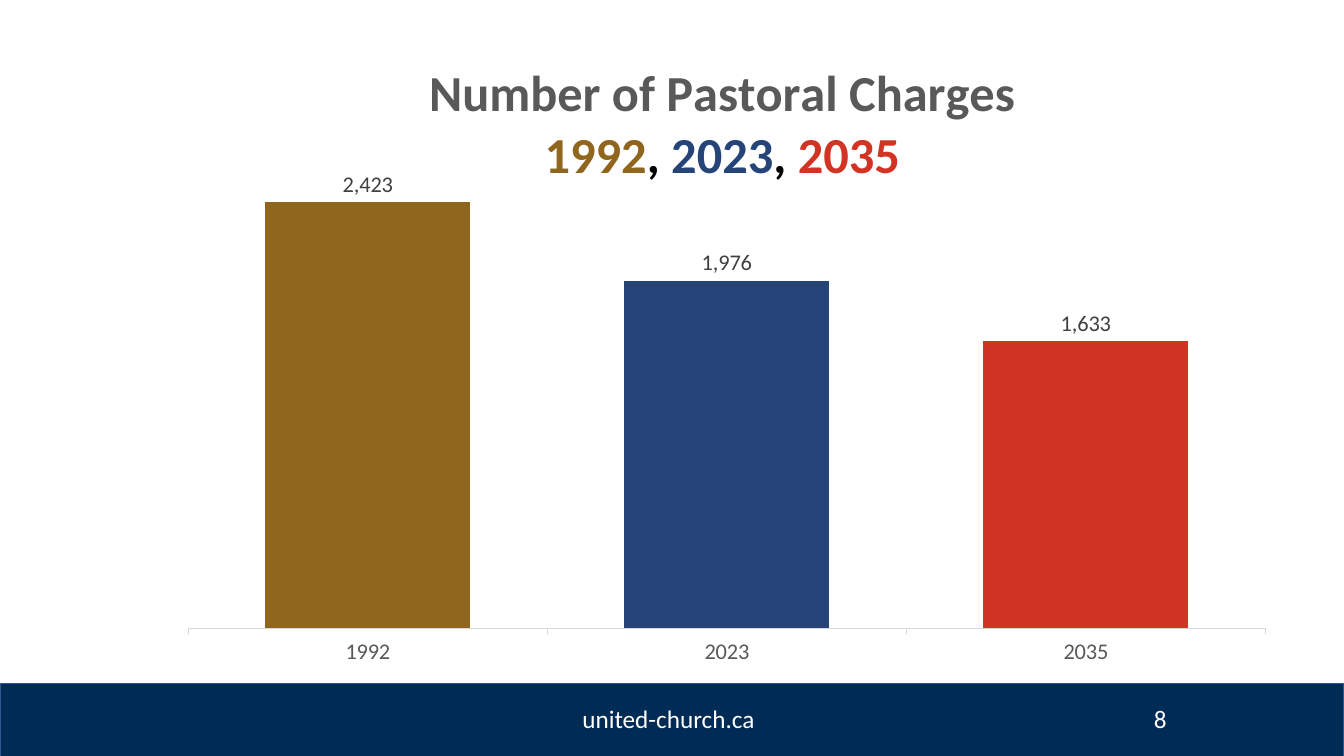
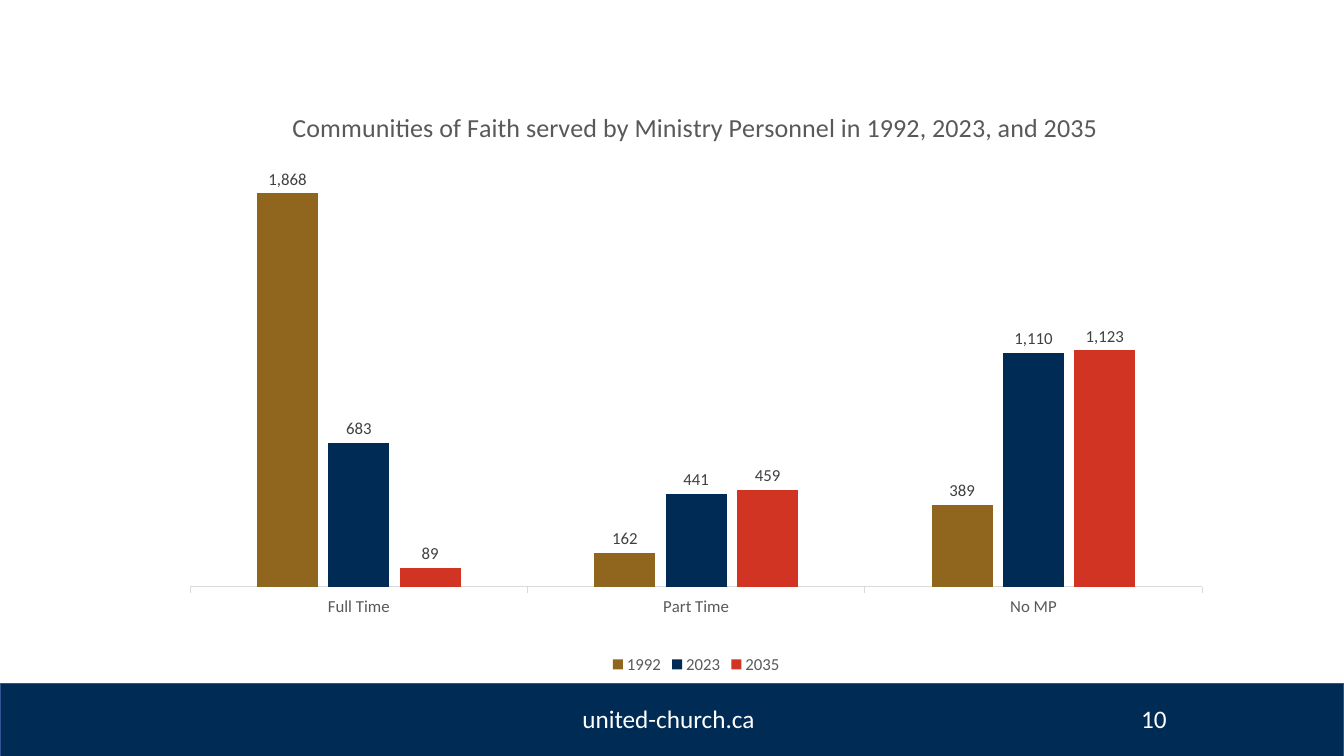
from lxml.etree import SubElement
from pptx import Presentation
from pptx.chart.data import CategoryChartData
from pptx.dml.color import RGBColor
from pptx.enum.chart import (XL_CHART_TYPE, XL_LABEL_POSITION, XL_LEGEND_POSITION,
                             XL_TICK_MARK)
from pptx.enum.shapes import MSO_SHAPE
from pptx.enum.text import PP_ALIGN
from pptx.oxml.ns import qn
from pptx.util import Inches, Pt

FONT = "Calibri"
NAVY, BLUE, GOLD, RED = "002B55", "264478", "90651E", "D23424"
GREY, DARK, PALE, BLACK, WHITE = "595959", "404040", "D9D9D9", "000000", "FFFFFF"
BAND_EDGE = "325491"
FOOTER = "united-church.ca"

# Title lines are lists of (text, colour); layouts are fractions of the chart
SLIDES = [
    {
        "number": "8",
        "at": (1.68, 0.38, 11.07, 6.61),
        "title": [[("Number of Pastoral Charges", GREY)],
                  [("1992", GOLD), (", ", BLACK), ("2023", BLUE), (", ", BLACK),
                   ("2035", RED)]],
        "title_font": {"size": Pt(36), "bold": True},
        "title_layout": {"x": 0.23, "y": 0.03},
        "plot_layout": {"x": 0.017, "y": 0.094, "w": 0.965, "h": 0.792},
        "plot": {"gap_width": 75, "overlap": -25, "vary_by_categories": False},
        "top_value": 3000,
        "label_size": 16,
        "legend": False,
        "categories": ["1992", "2023", "2035"],
        "series": [("Series 1", [2423, 1976, 1633], [GOLD, BLUE, RED])],
    },
    {
        "number": "10",
        "at": (1.71, 0.8, 10.39, 5.93),
        "title": [[("Communities of Faith served by Ministry Personnel "
                    "in 1992, 2023, and 2035", GREY)]],
        "title_font": {"size": Pt(18.6), "bold": False},
        "title_layout": {"x": 0.11, "y": 0.04},
        "plot_layout": {"x": 0.017, "y": 0.142, "w": 0.966, "h": 0.705},
        "plot": {"gap_width": 219, "overlap": -17, "vary_by_categories": False},
        "top_value": 2000,
        "label_size": 12,
        "legend": True,
        "categories": ["Full Time", "Part Time", "No MP"],
        "series": [("1992", [1868, 162, 389], [GOLD]),
                   ("2023", [683, 441, 1110], [NAVY]),
                   ("2035", [89, 459, 1123], [RED])],
    },
]


def colour(value):
    return RGBColor.from_string(value)


def apply(target, values):
    for name, value in values.items():
        setattr(target, name, value)


def style_font(font, shade, **values):
    apply(font, {"name": FONT, **values})
    font.color.rgb = colour(shade)


def paint(fill, shade):
    fill.solid()
    fill.fore_color.rgb = colour(shade)


def place(parent, position, fractions, inner=False):
    """Give a chart title or plot area a manual layout."""
    for old in parent.findall(qn("c:layout")):
        parent.remove(old)
    layout = SubElement(parent, qn("c:layout"))
    manual = SubElement(layout, qn("c:manualLayout"))
    if inner:
        SubElement(manual, qn("c:layoutTarget")).set("val", "inner")
    for key in ("x", "y"):
        SubElement(manual, qn(f"c:{key}Mode")).set("val", "edge")
    for key, fraction in fractions.items():
        SubElement(manual, qn(f"c:{key}")).set("val", str(fraction))
    parent.insert(position, layout)


def add_title(chart, content):
    chart.has_title = True
    title = chart.chart_title
    frame = title.text_frame
    for index, line in enumerate(content["title"]):
        para = frame.add_paragraph() if index else frame.paragraphs[0]
        para.alignment = PP_ALIGN.CENTER
        for text, shade in line:
            span = para.add_run()
            span.text = text
            style_font(span.font, shade, **content["title_font"])
    place(title.format.fill and frame._txBody.getparent().getparent(), 1,
          content["title_layout"])


def format_axes(chart, content):
    axis = chart.category_axis
    apply(axis, {"has_major_gridlines": False, "major_tick_mark": XL_TICK_MARK.OUTSIDE})
    style_font(axis.tick_labels.font, GREY, size=Pt(content["label_size"]))
    axis.format.line.width = Pt(0.75)
    axis.format.line.color.rgb = colour(PALE)
    apply(chart.value_axis, {"visible": False, "has_major_gridlines": False,
                             "minimum_scale": 0, "maximum_scale": content["top_value"]})


def format_series(series, shades, label_size):
    paint(series.format.fill, shades[0])
    if len(shades) > 1:
        for index, shade in enumerate(shades):
            paint(series.points[index].format.fill, shade)
    labels = series.data_labels
    apply(labels, {"show_value": True, "position": XL_LABEL_POSITION.OUTSIDE_END,
                   "number_format": "#,##0", "number_format_is_linked": False})
    style_font(labels.font, DARK, size=Pt(label_size))


def add_column_chart(page, content):
    data = CategoryChartData(number_format="#,##0")
    data.categories = content["categories"]
    for name, values, _ in content["series"]:
        data.add_series(name, values)
    frame = page.shapes.add_chart(XL_CHART_TYPE.COLUMN_CLUSTERED,
                                  *map(Inches, content["at"]), data)
    chart = frame.chart
    style_font(chart.font, BLACK, size=Pt(10))
    add_title(chart, content)
    format_axes(chart, content)

    plot = chart.plots[0]
    apply(plot, content["plot"])
    for series, (_, _, shades) in zip(plot.series, content["series"]):
        format_series(series, shades, content["label_size"])
    plot_area = chart.category_axis._element.getparent()
    place(plot_area, 0, content["plot_layout"], inner=True)

    chart.has_legend = content["legend"]
    if chart.has_legend:
        apply(chart.legend, {"position": XL_LEGEND_POSITION.BOTTOM,
                             "include_in_layout": False})
        style_font(chart.legend.font, GREY, size=Pt(content["label_size"]))


def add_footer(page, number, width):
    # Band across the foot of the slide
    band = page.shapes.add_shape(MSO_SHAPE.RECTANGLE, 0, Inches(6.78), width, Inches(0.75))
    band.shadow.inherit = False
    paint(band.fill, NAVY)
    band.line.color.rgb = colour(BAND_EDGE)
    band.line.width = Pt(1)
    # Web address and slide number
    for text, left, box_width, alignment in (
            (FOOTER, 4.42, 4.42, PP_ALIGN.CENTER),
            (number, 9.42, 2.25, PP_ALIGN.RIGHT)):
        box = page.shapes.add_textbox(Inches(left), Inches(6.93),
                                      Inches(box_width), Inches(0.4))
        box.text_frame.word_wrap = True
        para = box.text_frame.paragraphs[0]
        para.alignment = alignment
        span = para.add_run()
        span.text = text
        style_font(span.font, WHITE, size=Pt(18))


def main():
    deck = Presentation()
    apply(deck, {"slide_width": Inches(13.33), "slide_height": Inches(7.5)})
    blank = deck.slide_layouts.get_by_name("Blank")
    for content in SLIDES:
        page = deck.slides.add_slide(blank)
        add_column_chart(page, content)
        add_footer(page, content["number"], deck.slide_width)
    deck.save("out.pptx")


if __name__ == "__main__":
    main()
